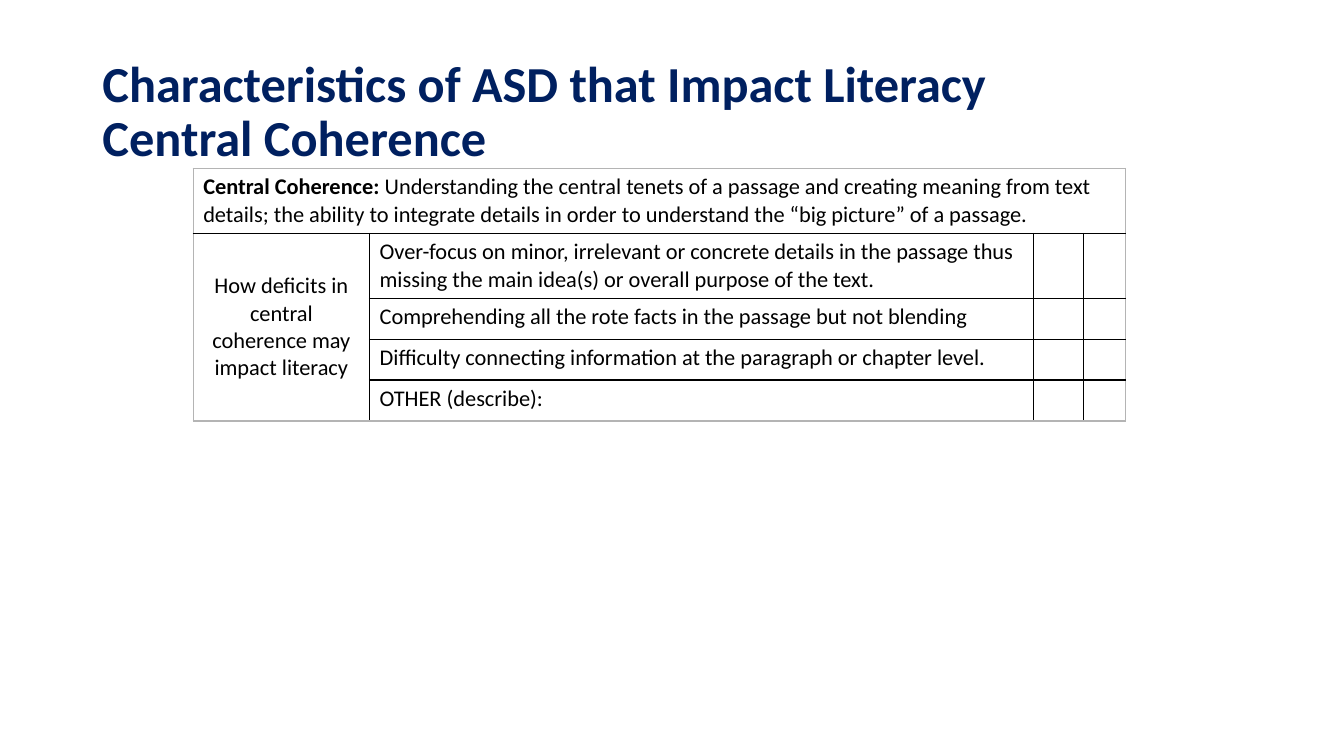
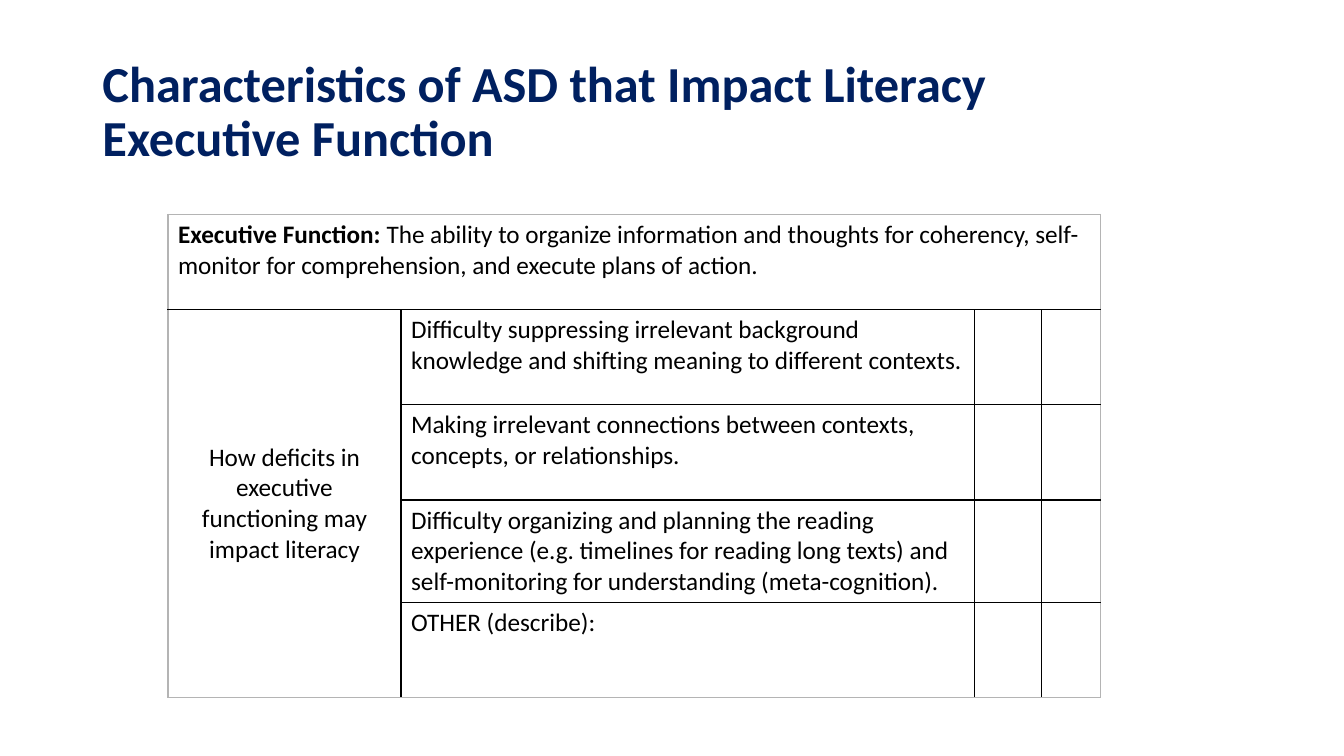
from lxml import etree
from pptx import Presentation
from pptx.dml.color import RGBColor
from pptx.enum.text import MSO_ANCHOR, MSO_AUTO_SIZE, PP_ALIGN
from pptx.oxml.ns import qn
from pptx.util import Pt

LEFT, CENTER = PP_ALIGN.LEFT, PP_ALIGN.CENTER
TOP, MIDDLE = MSO_ANCHOR.TOP, MSO_ANCHOR.MIDDLE
NO_FIT = MSO_AUTO_SIZE.NONE
TITLE_ONLY = 5

COLORS = {"title": "002060", "text": "000000", "inner": "000000", "outer": "B4B4B4"}
FONT = "Calibri"
TITLE_BOX = (66, 28.75, 828, 104.4)
TITLE_LEAD = "Characteristics of ASD that Impact Literacy"
OTHER = "OTHER (describe):"

SLIDES = [
    {
        "topic": "Central Coherence",
        "definition": "Understanding the central tenets of a passage and creating meaning "
                      "from text details; the ability to integrate details in order to "
                      "understand the “big picture” of a passage.",
        "label": "How deficits in central coherence may impact literacy",
        "impacts": [
            "Over-focus on minor, irrelevant or concrete details in the passage thus "
            "missing the main idea(s) or overall purpose of the text.",
            "Comprehending all the rote facts in the passage but not blending",
            "Difficulty connecting information at the paragraph or chapter level.",
            OTHER,
        ],
        "origin": (138, 120.4), "columns": (126, 474, 36, 30), "row": 29.2, "size": 16,
    },
    {
        "topic": "Executive Function",
        "definition": "The ability to organize information and thoughts for coherency, "
                      "self-monitor for comprehension, and execute plans of action.",
        "label": "How deficits in executive functioning may impact literacy",
        "impacts": [
            "Difficulty suppressing irrelevant background knowledge and shifting meaning "
            "to different contexts.",
            "Making irrelevant connections between contexts, concepts, or relationships.",
            "Difficulty organizing and planning the reading experience (e.g. timelines for "
            "reading long texts) and self-monitoring for understanding (meta-cognition).",
            OTHER,
        ],
        "origin": (120, 153.2), "columns": (166.5, 409.5, 48, 42), "row": 68, "size": 18,
    },
]


def set_font(font, color, **values):
    font.color.rgb = RGBColor.from_string(COLORS[color])
    for name, value in {"name": FONT, "bold": False, **values}.items():
        setattr(font, name, value)


def add_title(s, box, topic):
    sp = s.shapes.title
    for name, value in zip(("left", "top", "width", "height"), box):
        setattr(sp, name, Pt(value))
    tf = sp.text_frame
    for name, value in {"word_wrap": True, "auto_size": NO_FIT,
                        "vertical_anchor": MIDDLE}.items():
        setattr(tf, name, value)
    p = tf.paragraphs[0]
    p.alignment, p.line_spacing = LEFT, 0.9
    set_font(p.font, "title", size=Pt(36), bold=True)
    for i, line in enumerate((TITLE_LEAD, topic)):
        if i:
            p.add_line_break()
        r = p.add_run()
        r.text = line
        set_font(r.font, "title", size=Pt(36), bold=True)


def write_cell(cell, runs, size, align=LEFT, anchor=TOP):
    """Fill a cell with (text, bold) runs."""
    cell.vertical_anchor = anchor
    p = cell.text_frame.paragraphs[0]
    p.alignment = align
    set_font(p.font, "text", size=Pt(size))
    for text, bold in runs:
        r = p.add_run()
        r.text = text
        set_font(r.font, "text", size=Pt(size), bold=bold)


def region(row, col):
    """Cells of one merged area share a region."""
    if row == 0:
        return "definition"
    return "label" if col == 0 else (row, col)


def set_borders(table):
    """Grey frame around the table, black lines between its regions."""
    rows, cols = len(table.rows), len(table.columns)
    for row in range(rows):
        for col in range(cols):
            cell = table.cell(row, col)
            down = cell.span_height if cell.is_merge_origin else 1
            right = cell.span_width if cell.is_merge_origin else 1
            neighbours = {"lnL": (row, col - 1), "lnR": (row, col + right),
                          "lnT": (row - 1, col), "lnB": (row + down, col)}
            cell.fill.background()
            tcPr = cell._tc.get_or_add_tcPr()
            index = 0
            for tag, (r, c) in neighbours.items():
                inside = 0 <= r < rows and 0 <= c < cols
                if inside and region(r, c) == region(row, col):
                    continue
                ln = etree.Element(qn("a:" + tag), w=str(Pt(1)))
                fill = etree.SubElement(ln, qn("a:solidFill"))
                color = COLORS["inner" if inside else "outer"]
                etree.SubElement(fill, qn("a:srgbClr"), val=color)
                tcPr.insert(index, ln)
                index += 1


def add_impact_table(s, data):
    columns, size = data["columns"], data["size"]
    rows = len(data["impacts"]) + 1
    left, top = data["origin"]
    table = s.shapes.add_table(rows, len(columns), Pt(left), Pt(top), Pt(sum(columns)),
                               Pt(rows * data["row"])).table
    table.first_row = table.horz_banding = False
    for column, width in zip(table.columns, columns):
        column.width = Pt(width)
    for row in table.rows:
        row.height = Pt(data["row"])

    # Definition across the top, label down the left side
    table.cell(0, 0).merge(table.cell(0, len(columns) - 1))
    table.cell(1, 0).merge(table.cell(rows - 1, 0))
    write_cell(table.cell(0, 0),
               [(data["topic"] + ": ", True), (data["definition"], False)], size)
    write_cell(table.cell(1, 0), [(data["label"], False)], size, CENTER, MIDDLE)

    # Impacts, each with two empty boxes to mark
    for row, impact in enumerate(data["impacts"], 1):
        write_cell(table.cell(row, 1), [(impact, False)], size)
        for col in range(2, len(columns)):
            write_cell(table.cell(row, col), [], size)
    set_borders(table)


def main():
    prs = Presentation()
    prs.slide_width, prs.slide_height = Pt(960), Pt(540)
    for data in SLIDES:
        s = prs.slides.add_slide(prs.slide_layouts[TITLE_ONLY])
        add_title(s, TITLE_BOX, data["topic"])
        add_impact_table(s, data)
    prs.save("out.pptx")


if __name__ == "__main__":
    main()
